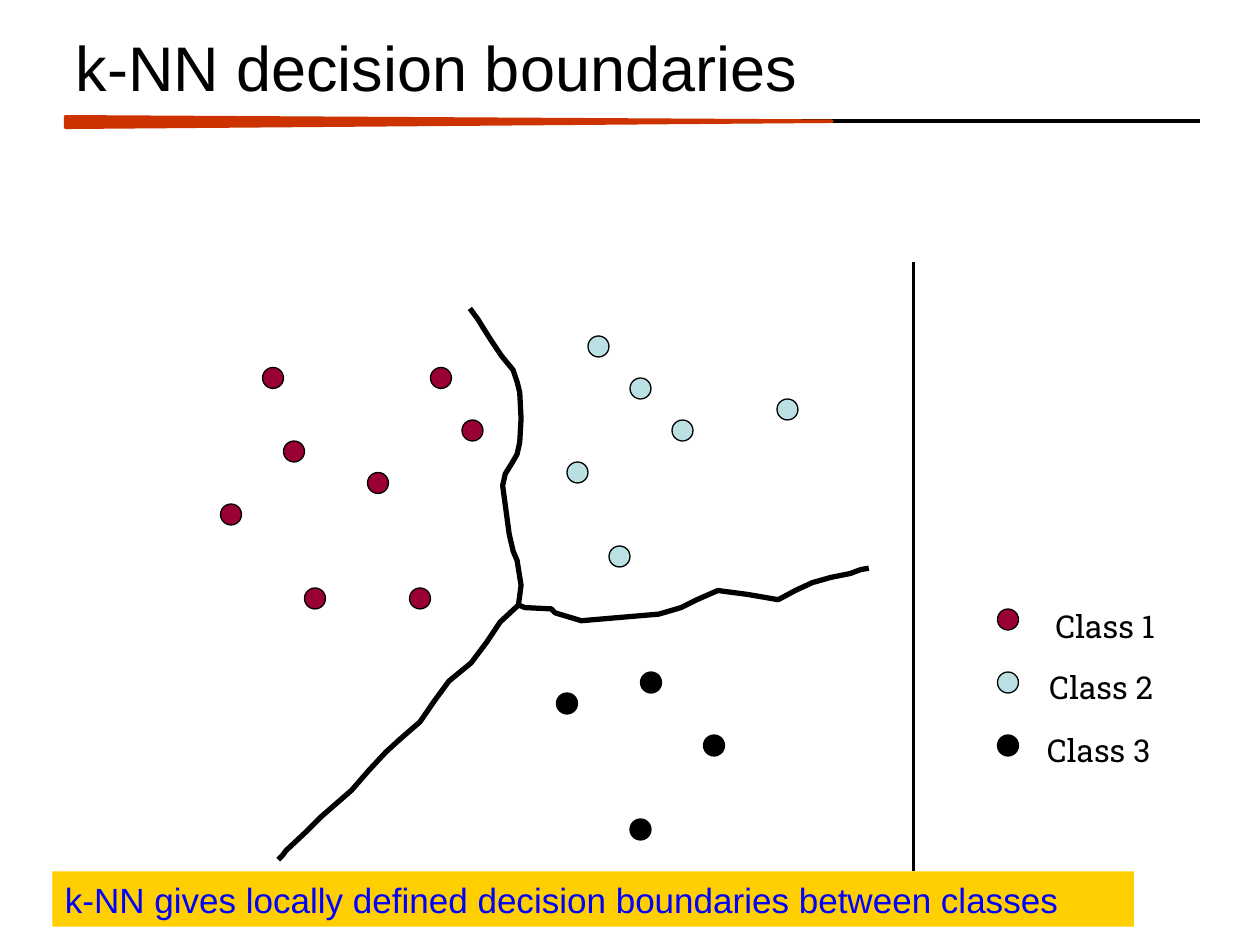
from lxml import etree
from pptx import Presentation
from pptx.dml.color import RGBColor
from pptx.enum.shapes import MSO_CONNECTOR, MSO_SHAPE
from pptx.enum.text import MSO_ANCHOR, MSO_AUTO_SIZE, PP_ALIGN
from pptx.oxml.ns import qn
from pptx.util import Pt

PX = 9525  # EMU per px, 96 px to the inch
STRAIGHT = MSO_CONNECTOR.STRAIGHT
OVAL, RECT, TRIANGLE = MSO_SHAPE.OVAL, MSO_SHAPE.RECTANGLE, MSO_SHAPE.ISOSCELES_TRIANGLE
LEFT, CENTER = PP_ALIGN.LEFT, PP_ALIGN.CENTER
TOP, MIDDLE = MSO_ANCHOR.TOP, MSO_ANCHOR.MIDDLE
NO_AUTOFIT = MSO_AUTO_SIZE.NONE
BLACK, RED, ORANGE = "000000", "990033", "CC3300"
PALE_BLUE, YELLOW, BLUE = "BBE0E3", "FFCF01", "0000FF"
DOT = 16


def paint(color_format, hex_color):
    color_format.rgb = RGBColor.from_string(hex_color)


def write(shape, text, size=18, font="Arial", color=BLACK, align=LEFT,
          anchor=MIDDLE, wrap=True):
    frame = shape.text_frame
    frame.auto_size = NO_AUTOFIT
    frame.word_wrap = wrap
    frame.vertical_anchor = anchor
    paragraph = frame.paragraphs[0]
    paragraph.alignment = align
    run = paragraph.add_run()
    run.text = text
    run.font.size = Pt(size)
    run.font.name = font
    paint(run.font.color, color)


prs = Presentation()
prs.slide_width, prs.slide_height = 960 * PX, 720 * PX
slide = prs.slides.add_slide(prs.slide_layouts[5])
shapes = slide.shapes

# Title
title = shapes.title
title.left, title.top, title.width, title.height = 48 * PX, 16 * PX, 864 * PX, 69 * PX
write(title, "k-NN decision boundaries", size=36)

# Title rule and the line beside the legend
for x1, y1, x2, y2, weight in [(50, 92, 914, 92, 2), (696, 200, 696, 664, 2.25)]:
    rule = shapes.add_connector(STRAIGHT, x1 * PX, y1 * PX, x2 * PX, y2 * PX)
    paint(rule.line.color, BLACK)
    rule.line.width = Pt(weight)
    etree.SubElement(rule._element.spPr, qn("a:effectLst"))

# Tapering wedge over the title rule
wedge = shapes.add_shape(TRIANGLE, 338 * PX, -199 * PX, 8 * PX, 584 * PX)
wedge.rotation = 90
wedge.adjustments[0] = 0.42
wedge.shadow.inherit = False
wedge.fill.solid()
paint(wedge.fill.fore_color, ORANGE)
paint(wedge.line.color, ORANGE)
wedge.line.width = Pt(2)

# Classes: colour, sample positions, legend dot top, legend label position
classes = [
    ("Class 1", RED,
     [(200, 280), (216, 336), (232, 448), (328, 280), (168, 384), (280, 360),
      (352, 320), (312, 448)], 464, (789, 458)),
    ("Class 2", PALE_BLUE,
     [(432, 352), (448, 256), (464, 416), (480, 288), (592, 304), (512, 320)],
     512, (786, 504)),
    ("Class 3", BLACK,
     [(488, 512), (424, 528), (480, 624), (536, 560)], 560, (784, 552)),
]
for class_name, color, samples, legend_top, (label_left, label_top) in classes:
    for left, top in samples + [(760, legend_top)]:
        sample = shapes.add_shape(OVAL, left * PX, top * PX, DOT * PX, DOT * PX)
        sample.shadow.inherit = False
        sample.fill.solid()
        paint(sample.fill.fore_color, color)
        paint(sample.line.color, BLACK)
        sample.line.width = Pt(0.75)
    label = shapes.add_textbox(label_left * PX, label_top * PX, 106 * PX, 34 * PX)
    write(label, class_name, font="Roboto Slab", align=CENTER, anchor=TOP, wrap=False)

# Decision boundaries
boundaries = [
    [(358, 235), (364, 243), (367, 248), (374, 259), (382, 271), (391, 282),
     (394, 291), (396, 299), (397, 319), (396, 337), (394, 346), (390, 353),
     (385, 361), (383, 370), (388, 407), (391, 420), (394, 427), (397, 446),
     (395, 461), (381, 474), (371, 489), (359, 505), (342, 519), (331, 534),
     (320, 550), (305, 563), (294, 573), (281, 587), (268, 602), (245, 622),
     (234, 633), (218, 648), (215, 652), (212, 655)],
    [(395, 461), (400, 463), (420, 464), (423, 467), (443, 473), (502, 468),
     (519, 463), (531, 457), (547, 450), (570, 453), (593, 457), (606, 450),
     (619, 444), (633, 440), (648, 437), (656, 434), (662, 433)],
]
for points in boundaries:
    outline = shapes.build_freeform(*points[0], scale=PX)
    outline.add_line_segments(points[1:], close=False)
    boundary = outline.convert_to_shape()
    boundary.shadow.inherit = False
    boundary.fill.background()
    paint(boundary.line.color, BLACK)
    boundary.line.width = Pt(3)

# Conclusion banner
banner = shapes.add_shape(RECT, 40 * PX, 664 * PX, 824 * PX, 42 * PX)
banner.shadow.inherit = False
banner.fill.solid()
paint(banner.fill.fore_color, YELLOW)
banner.line.fill.background()
write(banner, "k-NN gives locally defined decision boundaries between classes",
      size=20, color=BLUE)

prs.save("out.pptx")
